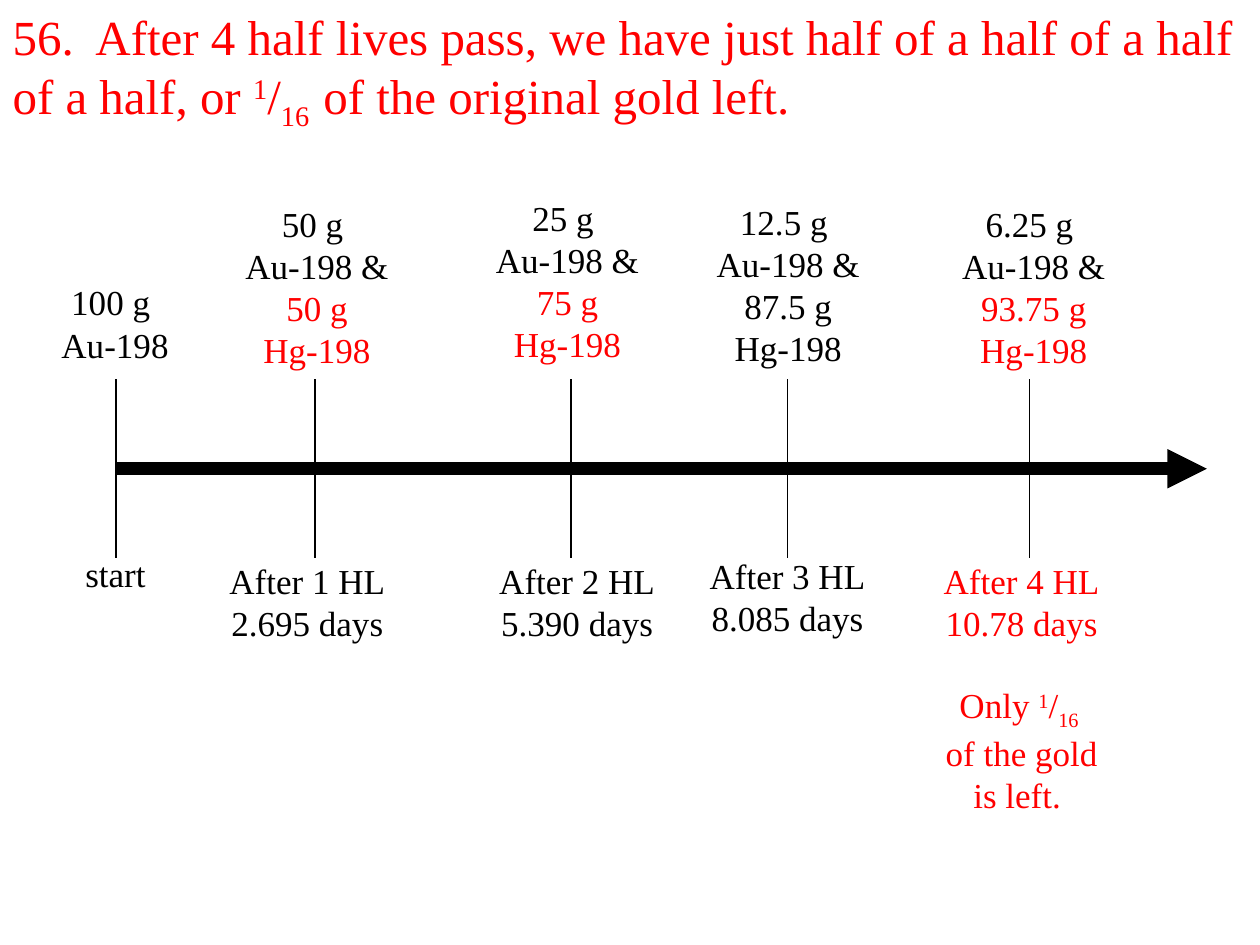
from dataclasses import dataclass
from typing import NamedTuple

from pptx import Presentation
from pptx.dml.color import RGBColor
from pptx.enum.shapes import MSO_CONNECTOR
from pptx.enum.text import MSO_ANCHOR, MSO_AUTO_SIZE, PP_ALIGN
from pptx.oxml.ns import qn
from pptx.util import Cm, Pt
from lxml import etree

STRAIGHT = MSO_CONNECTOR.STRAIGHT
LEFT, CENTER = PP_ALIGN.LEFT, PP_ALIGN.CENTER
TOP = MSO_ANCHOR.TOP
NO_AUTOFIT = MSO_AUTO_SIZE.NONE
TITLE_ONLY = 5


@dataclass(frozen=True)
class Theme:
    font: str = "Times New Roman"
    ink: RGBColor = RGBColor(0, 0, 0)
    accent: RGBColor = RGBColor(255, 0, 0)
    title_size: int = 28
    label_size: int = 20
    label_line: int = 23
    axis_width: float = 7.5
    tick_width: float = 0.75


THEME = Theme()
SUPERSCRIPT, SUBSCRIPT = "30000", "-25000"

SLIDE_WIDTH, SLIDE_HEIGHT = 25.4, 19.05
AXIS_START, AXIS_END, AXIS_Y = 2.34, 24.33, 9.45
TICK_TOP, TICK_BOTTOM = 7.65, 11.25
AMOUNT_WIDTH, TIME_WIDTH = 4.24, 3.81


class Piece(NamedTuple):
    text: str
    color: RGBColor = THEME.ink
    baseline: str = ""


class Line(NamedTuple):
    pieces: list[Piece]
    space_before: int = 0


class Label(NamedTuple):
    left: float
    top: float
    width: float
    height: float
    lines: list[Line]
    align: PP_ALIGN = CENTER


class Stage(NamedTuple):
    tick_x: float
    amount: Label
    time: Label


def red(text: str, baseline: str = "") -> Piece:
    return Piece(text, THEME.accent, baseline)


def sixteenth(tail: str) -> list[Piece]:
    """The fraction 1/16, its denominator followed by tail."""
    return [red("1", SUPERSCRIPT), red("/"), red("16" + tail, SUBSCRIPT)]


def amount(left: float, top: float, *pieces: Piece, height: float = 3.68) -> Label:
    return Label(left, top, AMOUNT_WIDTH, height, [Line(list(pieces))])


def elapsed(left: float, top: float, half_lives: int, days: str) -> Label:
    lines = [Line([Piece(f"After {half_lives} HL")]), Line([Piece(f"{days} days")])]
    return Label(left, top, TIME_WIDTH, 1.96, lines)


TITLE = [
    red("56.  After 4 half lives pass, we have just half of a half of a half of a half, or "),
    *sixteenth("  "),
    red("of the original gold left."),
]

STAGES = [
    Stage(2.34, amount(0.2, 5.54, Piece("100 g \nAu-198"), height=1.96),
          Label(1.47, 11.02, 2.11, 1.12, [Line([Piece("start")])], LEFT)),
    Stage(6.35, amount(4.27, 3.96, Piece("50 g \nAu-198 & "), red("50 g\nHg-198")),
          elapsed(4.29, 11.15, 1, "2.695")),
    Stage(11.51, amount(9.32, 3.84, Piece("25 g \nAu-198 & "), red("75 g\nHg-198")),
          elapsed(9.73, 11.15, 2, "5.390")),
    Stage(15.88, amount(13.77, 3.91, Piece("12.5 g \nAu-198 & 87.5 g\nHg-198")),
          elapsed(13.97, 11.05, 3, "8.085")),
    Stage(20.75, amount(18.72, 3.96, Piece("6.25 g \nAu-198 & "), red("93.75 g\nHg-198")),
          Label(18.69, 11.15, TIME_WIDTH, 5.38, [
              Line([red("After 4 HL")]),
              Line([red("10.78 days")]),
              Line([red("Only "), *sixteenth(" \n"), red("of the gold is left. ")],
                   THEME.label_line),
          ])),
]


def add_pieces(paragraph, pieces: list[Piece], size: int) -> None:
    """Write each piece as runs, with a line break at each newline."""
    for piece in pieces:
        for index, text in enumerate(piece.text.split("\n")):
            if index:
                paragraph.add_line_break()
            if not text:
                continue
            run = paragraph.add_run()
            run.text = text
            run.font.name = THEME.font
            run.font.size = Pt(size)
            run.font.color.rgb = piece.color
            if piece.baseline:
                run._r.get_or_add_rPr().set("baseline", piece.baseline)


def add_title(slide, pieces: list[Piece]) -> None:
    title = slide.shapes.title
    title.left, title.top = Cm(0), Cm(0)
    title.width, title.height = Cm(SLIDE_WIDTH), Cm(2.64)
    frame = title.text_frame
    frame.word_wrap = True
    frame.auto_size = NO_AUTOFIT
    frame.vertical_anchor = TOP
    paragraph = frame.paragraphs[0]
    paragraph.alignment = LEFT
    add_pieces(paragraph, pieces, THEME.title_size)


def add_label(slide, label: Label) -> None:
    box = slide.shapes.add_textbox(
        Cm(label.left), Cm(label.top), Cm(label.width), Cm(label.height))
    frame = box.text_frame
    frame.word_wrap = True
    for index, line in enumerate(label.lines):
        paragraph = frame.add_paragraph() if index else frame.paragraphs[0]
        paragraph.alignment = label.align
        paragraph.space_before = Pt(line.space_before)
        add_pieces(paragraph, line.pieces, THEME.label_size)


def add_line(slide, x1: float, y1: float, x2: float, y2: float,
             width: float, arrow: bool = False) -> None:
    connector = slide.shapes.add_connector(STRAIGHT, Cm(x1), Cm(y1), Cm(x2), Cm(y2))
    connector.line.color.rgb = THEME.ink
    connector.line.width = Pt(width)
    properties = connector._element.spPr
    if arrow:
        outline = properties.find(qn("a:ln"))
        etree.SubElement(outline, qn("a:tailEnd"), type="triangle")
    etree.SubElement(properties, qn("a:effectLst"))


def main() -> None:
    deck = Presentation()
    deck.slide_width, deck.slide_height = Cm(SLIDE_WIDTH), Cm(SLIDE_HEIGHT)
    slide = deck.slides.add_slide(deck.slide_layouts[TITLE_ONLY])

    add_title(slide, TITLE)
    add_line(slide, AXIS_START, AXIS_Y, AXIS_END, AXIS_Y, THEME.axis_width, arrow=True)
    for stage in STAGES:
        add_line(slide, stage.tick_x, TICK_TOP, stage.tick_x, TICK_BOTTOM, THEME.tick_width)
        add_label(slide, stage.amount)
        add_label(slide, stage.time)

    deck.save("out.pptx")


if __name__ == "__main__":
    main()
